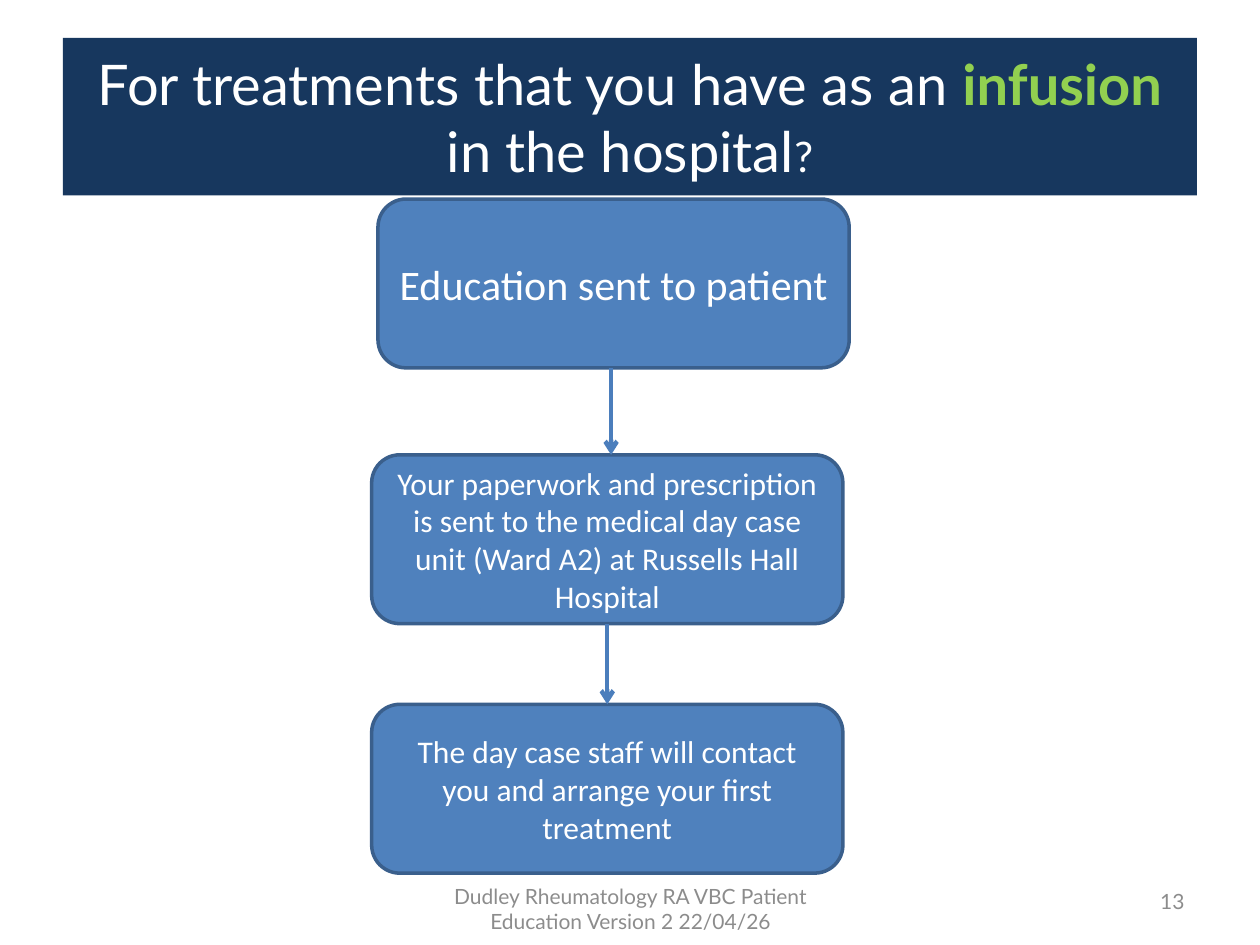
from dataclasses import dataclass

from lxml import etree
from pptx import Presentation
from pptx.dml.color import RGBColor
from pptx.enum.shapes import MSO_CONNECTOR, MSO_SHAPE
from pptx.enum.text import MSO_ANCHOR, PP_ALIGN
from pptx.oxml.ns import qn
from pptx.util import Inches, Pt

RECT, ROUND = MSO_SHAPE.RECTANGLE, MSO_SHAPE.ROUNDED_RECTANGLE
STRAIGHT = MSO_CONNECTOR.STRAIGHT
MIDDLE = MSO_ANCHOR.MIDDLE
CENTER, RIGHT = PP_ALIGN.CENTER, PP_ALIGN.RIGHT
TOP_SITE, BOTTOM_SITE = 0, 2
COLORS = {"navy": "17375E", "green": "92D050", "white": "FFFFFF", "blue": "4F81BD",
          "edge": "3A5F8C", "arrow": "4B7EBC", "grey": "8C8C8C"}
STEP_W, STEP_H = 3.74, 1.34


@dataclass
class Step:
    text: str
    left: float
    top: float
    size: int = 18


STEPS = [
    Step("Education sent to patient", 3, 1.58, 24),
    Step("Your paperwork and prescription is sent to the medical day case unit "
         "(Ward A2) at Russells Hall Hospital", 2.95, 3.61),
    Step("The day case staff will contact you and arrange your first treatment", 2.95, 5.59),
]


def rgb(name: str) -> RGBColor:
    """Look up a named colour."""
    return RGBColor.from_string(COLORS[name])


def add_text(sp, text: str, *, size: int, color: str = "white", font: str = "Lato",
             bold: bool = False, align=CENTER) -> None:
    """Append a formatted run to the shape's paragraph."""
    tf = sp.text_frame
    tf.word_wrap = True
    tf.vertical_anchor = MIDDLE
    p = tf.paragraphs[0]
    p.alignment = align
    r = p.add_run()
    r.text = text
    r.font.name, r.font.size, r.font.bold = font, Pt(size), bold
    r.font.color.rgb = rgb(color)


def add_box(s, kind, left: float, top: float, width: float, height: float,
            fill: str, line: str | None = None):
    """Draw a filled shape with an optional outline."""
    sp = s.shapes.add_shape(kind, Inches(left), Inches(top), Inches(width), Inches(height))
    sp.shadow.inherit = False
    sp.fill.solid()
    sp.fill.fore_color.rgb = rgb(fill)
    if line:
        sp.line.color.rgb = rgb(line)
        sp.line.width = Pt(2)
    else:
        sp.line.fill.background()
    return sp


def add_step(s, step: Step):
    """Draw one step of the flow."""
    sp = add_box(s, ROUND, step.left, step.top, STEP_W, STEP_H, "blue", "edge")
    add_text(sp, step.text, size=step.size, font="Calibri")
    return sp


def add_arrow(s, x: float, top: float, bottom: float):
    """Draw a downward arrow."""
    cxn = s.shapes.add_connector(STRAIGHT, Inches(x), Inches(top), Inches(x), Inches(bottom))
    cxn.line.color.rgb = rgb("arrow")
    cxn.line.width = Pt(2.5)
    etree.SubElement(cxn.line._get_or_add_ln(), qn("a:tailEnd"), type="arrow")
    etree.SubElement(cxn._element.spPr, qn("a:effectLst"))
    return cxn


def add_note(s, text: str, left: float, top: float, width: float, align) -> None:
    """Draw a line of footer text."""
    sp = s.shapes.add_textbox(Inches(left), Inches(top), Inches(width), Inches(0.4))
    add_text(sp, text, size=12, color="grey", align=align)


def main() -> None:
    """Build the infusion pathway slide."""
    prs = Presentation()
    prs.slide_width, prs.slide_height = Inches(10), Inches(7.5)
    s = prs.slides.add_slide(prs.slide_layouts[6])

    title = add_box(s, RECT, 0.5, 0.3, 9, 1.25, "navy")
    add_text(title, "For treatments that you have as an ", size=32)
    add_text(title, "infusion", size=32, color="green", bold=True)
    add_text(title, " in the hospital", size=32)
    add_text(title, "?", size=24)

    education, paperwork, contact = STEPS
    _, paperwork_box, contact_box = [add_step(s, step) for step in STEPS]
    add_arrow(s, 4.85, education.top + STEP_H, paperwork.top)
    cxn = add_arrow(s, paperwork.left + STEP_W / 2, paperwork.top + STEP_H, contact.top)
    cxn.begin_connect(paperwork_box, BOTTOM_SITE)
    cxn.end_connect(contact_box, TOP_SITE)

    add_note(s, "13", 7.17, 6.95, 2.33, RIGHT)
    add_note(s, "Dudley Rheumatology RA VBC Patient Education Version 2 22/04/26",
             3.42, 7.01, 3.17, CENTER)
    prs.save("out.pptx")


if __name__ == "__main__":
    main()
